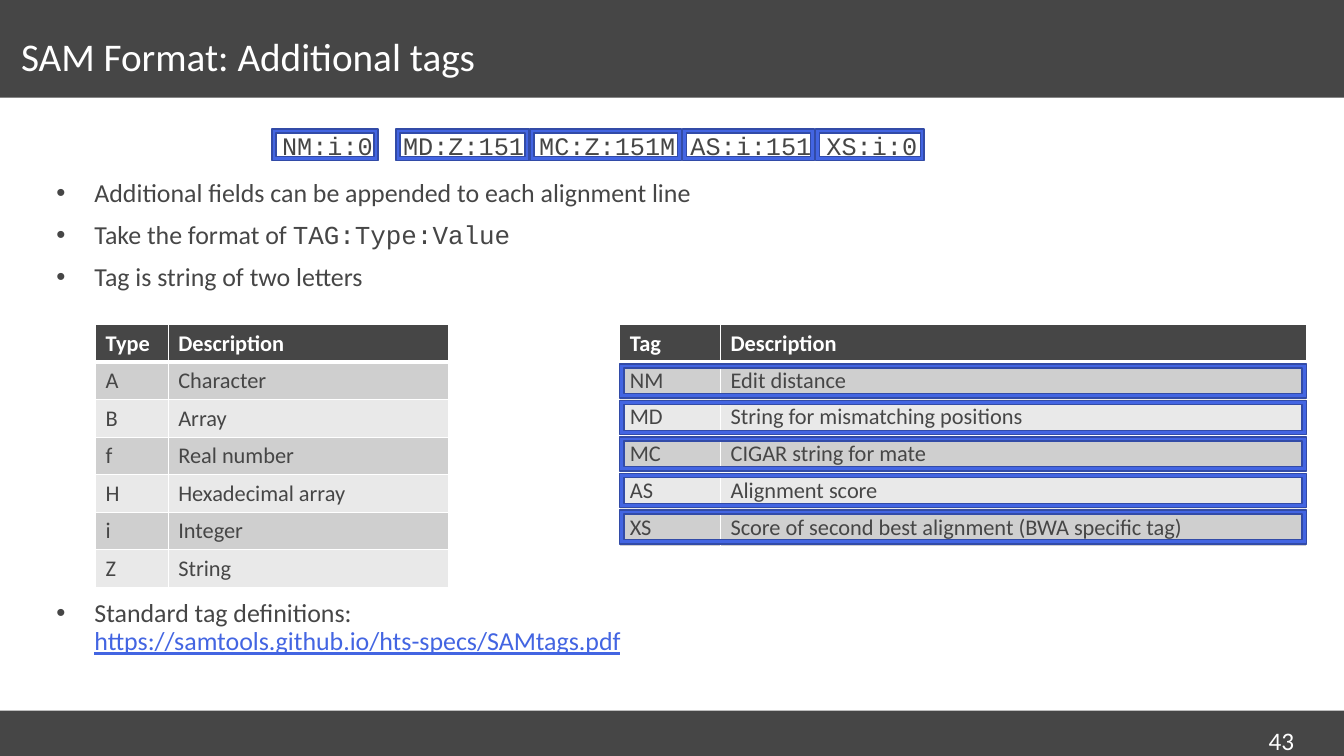
from dataclasses import dataclass

from lxml.etree import SubElement
from pptx import Presentation
from pptx.dml.color import RGBColor
from pptx.enum.shapes import MSO_SHAPE
from pptx.enum.text import MSO_ANCHOR, MSO_AUTO_SIZE, PP_ALIGN
from pptx.oxml.ns import qn
from pptx.slide import Slide
from pptx.text.text import TextFrame, _Paragraph
from pptx.util import Cm, Pt

FRAME, RECT = MSO_SHAPE.FRAME, MSO_SHAPE.RECTANGLE
MIDDLE, LEFT, FIXED = MSO_ANCHOR.MIDDLE, PP_ALIGN.LEFT, MSO_AUTO_SIZE.NONE


@dataclass(frozen=True)
class Theme:
    dark: str = "464646"
    white: str = "FFFFFF"
    blue: str = "4365E2"
    edge: str = "324BA7"
    bands: tuple[str, str] = ("CFCFCF", "E9E9E9")
    sans: str = "Calibri"
    mono: str = "Courier New"
    head: float = 28
    body: float = 18.5
    code: float = 18
    cell: float = 16


@dataclass(frozen=True)
class Box:
    left: float
    top: float
    width: float
    height: float

    def place(self) -> tuple[Cm, Cm, Cm, Cm]:
        return Cm(self.left), Cm(self.top), Cm(self.width), Cm(self.height)


@dataclass(frozen=True)
class Grid:
    left: float
    widths: tuple[float, float]
    height: float
    rows: tuple[tuple[str, str], ...]


@dataclass(frozen=True)
class Tag:
    text: str
    left: float
    width: float
    note: str


THEME = Theme()
WIDE, HIGH = 33.87, 19.05
TABLE_TOP = 8.18
ROW_TOP, ROW_STEP = 9.17, 0.92
TAGS = (
    Tag("NM:i:0", 6.86, 2.67, "Edit distance"),
    Tag("MD:Z:151", 9.98, 3.35, "String for mismatching positions"),
    Tag("MC:Z:151M", 13.36, 3.81, "CIGAR string for mate"),
    Tag("AS:i:151", 17.2, 3.33, "Alignment score"),
    Tag("XS:i:0", 20.55, 2.74, "Score of second best alignment (BWA specific tag)"),
)
TYPES = Grid(2.41, (1.83, 7.06), 0.94, (
    ("Type", "Description"), ("A", "Character"), ("B", "Array"),
    ("f", "Real number"), ("H", "Hexadecimal array"),
    ("i", "Integer"), ("Z", "String")))
NOTES = Grid(15.62, (2.54, 14.76), 0.93, (
    ("Tag", "Description"), *((tag.text[:2], tag.note) for tag in TAGS)))


def rgb(code: str) -> RGBColor:
    return RGBColor.from_string(code)


def write(para: _Paragraph, text: str, *, size: float, color: str = THEME.dark,
          font: str = THEME.sans, bold: bool = False, under: bool = False) -> None:
    run = para.add_run()
    run.text = text
    face = run.font
    face.name, face.size, face.bold = font, Pt(size), bold
    face.color.rgb = rgb(color)
    if under:
        face.underline = True


def paint(shape, fill: str, edge: str | None = None) -> None:
    shape.shadow.inherit = False
    shape.fill.solid()
    shape.fill.fore_color.rgb = rgb(fill)
    if edge:
        shape.line.color.rgb = rgb(edge)
        shape.line.width = Pt(1)
    else:
        shape.line.fill.background()


def add_band(slide: Slide, box: Box) -> None:
    band = slide.shapes.add_shape(RECT, *box.place())
    paint(band, THEME.dark)
    slide.shapes._spTree.insert(2, band._element)


def set_holder(shape, box: Box) -> TextFrame:
    shape.left, shape.top, shape.width, shape.height = box.place()
    frame = shape.text_frame
    frame.auto_size = FIXED
    frame.margin_left = frame.margin_right = 0
    return frame


def add_point(frame: TextFrame, before: float) -> _Paragraph:
    para = frame.paragraphs[0] if not frame.text else frame.add_paragraph()
    para.line_spacing = 0.9
    para.space_before, para.space_after = Pt(before), Pt(4)
    props = para._p.get_or_add_pPr()
    props.set("marL", str(Cm(0.96)))
    props.set("indent", str(-Cm(0.96)))
    tint = SubElement(props, qn("a:buClr"))
    SubElement(tint, qn("a:srgbClr"), val=THEME.dark)
    SubElement(props, qn("a:buChar"), char="•")
    return para


def add_break(para: _Paragraph, size: float) -> None:
    para.add_line_break()
    SubElement(para._p[-1], qn("a:rPr"), sz=str(int(size * 100)))


def set_edges(cell, row: int) -> None:
    props = cell._tc.get_or_add_tcPr()
    thick = {"T": row == 1, "B": row == 0}
    for side in "LRTB":
        width = Pt(3 if thick.get(side) else 1)
        line = SubElement(props, qn(f"a:ln{side}"), w=str(width))
        fill = SubElement(line, qn("a:solidFill"))
        SubElement(fill, qn("a:srgbClr"), val=THEME.white)


def add_grid(slide: Slide, grid: Grid) -> None:
    count = len(grid.rows)
    box = Box(grid.left, TABLE_TOP, sum(grid.widths), grid.height * count)
    table = slide.shapes.add_table(count, len(grid.widths), *box.place()).table
    for column, width in zip(table.columns, grid.widths):
        column.width = Cm(width)
    for r, words in enumerate(grid.rows):
        table.rows[r].height = Cm(grid.height)
        top = r == 0
        for c, word in enumerate(words):
            cell = table.cell(r, c)
            set_edges(cell, r)
            cell.fill.solid()
            cell.fill.fore_color.rgb = rgb(THEME.dark if top else THEME.bands[(r - 1) % 2])
            write(cell.text_frame.paragraphs[0], word, size=THEME.cell, bold=top,
                  color=THEME.white if top else THEME.dark)


def add_text(slide: Slide, box: Box) -> _Paragraph:
    frame = slide.shapes.add_textbox(*box.place()).text_frame
    frame.word_wrap = True
    return frame.paragraphs[0]


def add_tags(slide: Slide) -> None:
    for i, tag in enumerate(TAGS):
        pair = slide.shapes.add_group_shape()
        for box in (Box(tag.left, 3.25, tag.width, 0.79),
                    Box(NOTES.left, ROW_TOP + i * ROW_STEP, sum(NOTES.widths), 0.86)):
            paint(pair.shapes.add_shape(FRAME, *box.place()), THEME.blue, THEME.edge)


def main() -> None:
    deck = Presentation()
    deck.slide_width, deck.slide_height = Cm(WIDE), Cm(HIGH)
    slide = deck.slides.add_slide(deck.slide_layouts[1])
    add_band(slide, Box(0, 0, WIDE, 2.46))
    add_band(slide, Box(0, 17.91, WIDE, 1.14))

    title = set_holder(slide.shapes.title, Box(0.53, 0.58, 29.26, 1.9))
    title.vertical_anchor = MIDDLE
    head = title.paragraphs[0]
    head.alignment, head.line_spacing = LEFT, 0.8
    write(head, "SAM Format: Additional tags", size=THEME.head, color=THEME.white)

    body = set_holder(slide.placeholders[1], Box(1.42, 4.42, 31.47, 13.13))
    write(add_point(body, 0), "Additional fields can be appended to each alignment line",
          size=THEME.body)
    form = add_point(body, 6)
    write(form, "Take the format of ", size=THEME.body)
    write(form, "TAG:Type:Value", size=THEME.body, font=THEME.mono)
    write(add_point(body, 6), "Tag is string of two letters", size=THEME.body)
    specs = add_point(body, 216)
    write(specs, "Standard tag definitions:", size=THEME.body)
    add_break(specs, THEME.body)
    write(specs, "https://samtools.github.io/hts-specs/SAMtags.pdf",
          size=THEME.body, color=THEME.blue, under=True)

    add_grid(slide, TYPES)
    write(add_text(slide, Box(31.72, 18.14, 1.78, 0.64)), "43",
          size=THEME.code, color=THEME.white)
    line = add_text(slide, Box(6.86, 3.15, 17, 1.02))
    stops = SubElement(line._p.get_or_add_pPr(), qn("a:tabLst"))
    SubElement(stops, qn("a:tab"), pos=str(Cm(3.05)), algn="l")
    first, *rest = (tag.text for tag in TAGS)
    write(line, first + "\t" + " ".join(rest), size=THEME.code, font=THEME.mono)
    add_grid(slide, NOTES)
    add_tags(slide)
    deck.save("out.pptx")


if __name__ == "__main__":
    main()
